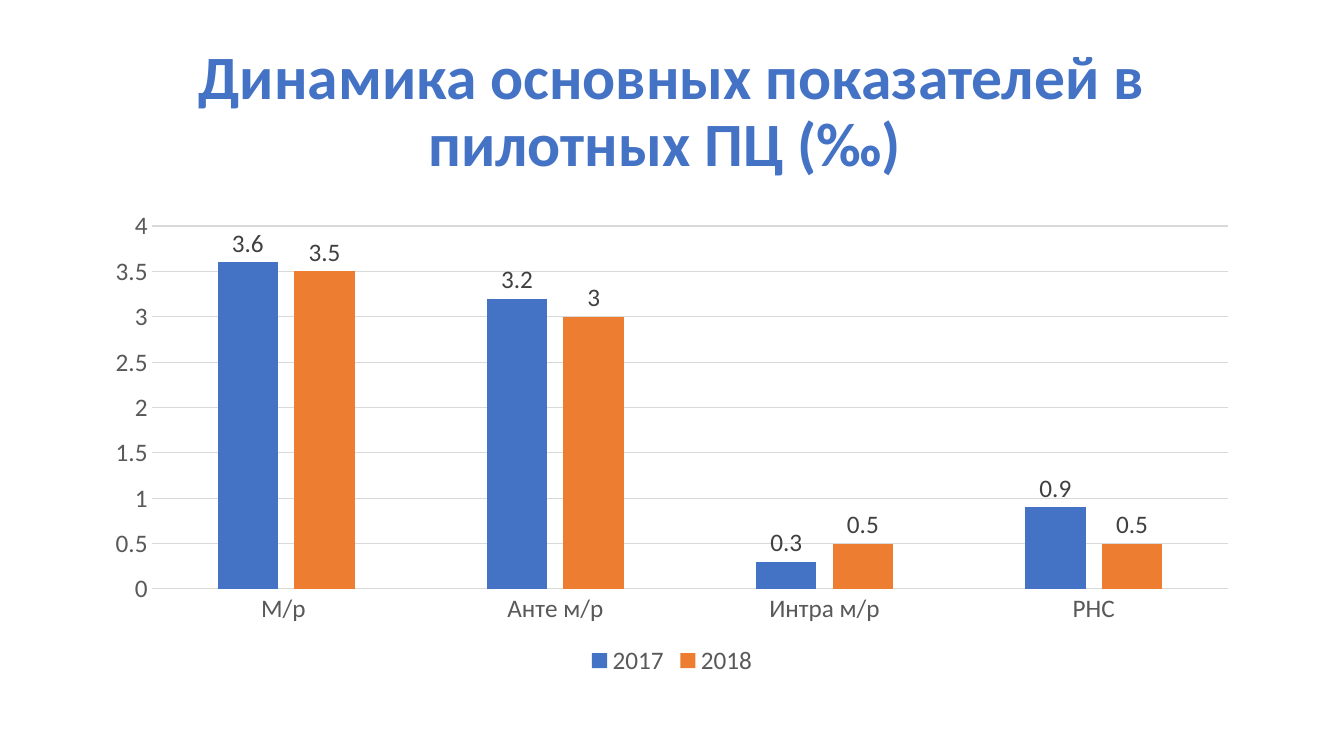
from pptx import Presentation
from pptx.chart.data import CategoryChartData
from pptx.dml.color import RGBColor
from pptx.enum.chart import XL_CHART_TYPE, XL_LABEL_POSITION, XL_LEGEND_POSITION, XL_TICK_MARK
from pptx.enum.text import MSO_ANCHOR, PP_ALIGN
from pptx.util import Cm, Pt

COLORS = {
    "blue": "4472C4",
    "orange": "ED7D31",
    "grid": "D9D9D9",
    "axis": "595959",
    "label": "404040",
    "text": "000000",
}
FONT = "Calibri"
TITLE = "Динамика основных показателей в пилотных ПЦ (‰) "
CATEGORIES = ["М/р ", "Анте м/р", "Интра м/р", "РНС"]
SERIES = [
    ("2017", [3.6, 3.2, 0.3, 0.9], "blue"),
    ("2018", [3.5, 3, 0.5, 0.5], "orange"),
]


def rgb(name):
    return RGBColor.from_string(COLORS[name])


def set_attributes(target, values):
    for name, value in values.items():
        setattr(target, name, value)


def set_font(font, size, color, bold=False):
    set_attributes(font, {"name": FONT, "size": Pt(size), "bold": bold})
    font.color.rgb = rgb(color)


def set_line(line, color):
    line.color.rgb = rgb(color)
    line.width = Pt(0.75)


def add_title(slide, left, top, width, height):
    tf = slide.shapes.add_textbox(left, top, width, height).text_frame
    set_attributes(tf, {"word_wrap": True, "vertical_anchor": MSO_ANCHOR.MIDDLE})
    p = tf.paragraphs[0]
    set_attributes(p, {"alignment": PP_ALIGN.CENTER, "line_spacing": 0.9})
    r = p.add_run()
    r.text = TITLE
    set_font(r.font, 44, "blue", bold=True)


def format_axes(chart):
    ticks = {"major_tick_mark": XL_TICK_MARK.NONE, "minor_tick_mark": XL_TICK_MARK.NONE}
    for axis in (chart.category_axis, chart.value_axis):
        set_attributes(axis, ticks)
        set_font(axis.tick_labels.font, 18, "axis")
    set_line(chart.category_axis.format.line, "grid")
    value_axis = chart.value_axis
    set_attributes(value_axis, {"minimum_scale": 0, "maximum_scale": 4, "major_unit": 0.5})
    value_axis.format.line.fill.background()
    set_line(value_axis.major_gridlines.format.line, "grid")


def add_indicator_chart(slide, left, top, width, height):
    data = CategoryChartData()
    data.categories = CATEGORIES
    for name, values, _ in SERIES:
        data.add_series(name, values)
    chart = slide.shapes.add_chart(
        XL_CHART_TYPE.COLUMN_CLUSTERED, left, top, width, height, data
    ).chart
    set_font(chart.font, 18, "text")
    set_attributes(chart, {"has_title": False, "has_legend": True})
    set_attributes(
        chart.legend, {"position": XL_LEGEND_POSITION.BOTTOM, "include_in_layout": False}
    )
    set_font(chart.legend.font, 18, "axis")
    format_axes(chart)

    plot = chart.plots[0]
    set_attributes(plot, {"gap_width": 219, "overlap": -27, "vary_by_categories": False})
    for series, (_, _, color) in zip(plot.series, SERIES):
        series.format.fill.solid()
        series.format.fill.fore_color.rgb = rgb(color)
        labels = series.data_labels
        set_attributes(
            labels, {"show_value": True, "position": XL_LABEL_POSITION.OUTSIDE_END}
        )
        set_font(labels.font, 18, "label")


def main():
    prs = Presentation()
    set_attributes(prs, {"slide_width": Cm(33.87), "slide_height": Cm(19.05)})
    slide = prs.slides.add_slide(prs.slide_layouts[6])
    margin = Cm(2.33)
    content_width = prs.slide_width - 2 * margin
    add_title(slide, margin, Cm(1.01), content_width, Cm(3.68))
    add_indicator_chart(slide, margin, Cm(5.07), content_width, Cm(12.09))
    prs.save("out.pptx")


if __name__ == "__main__":
    main()
